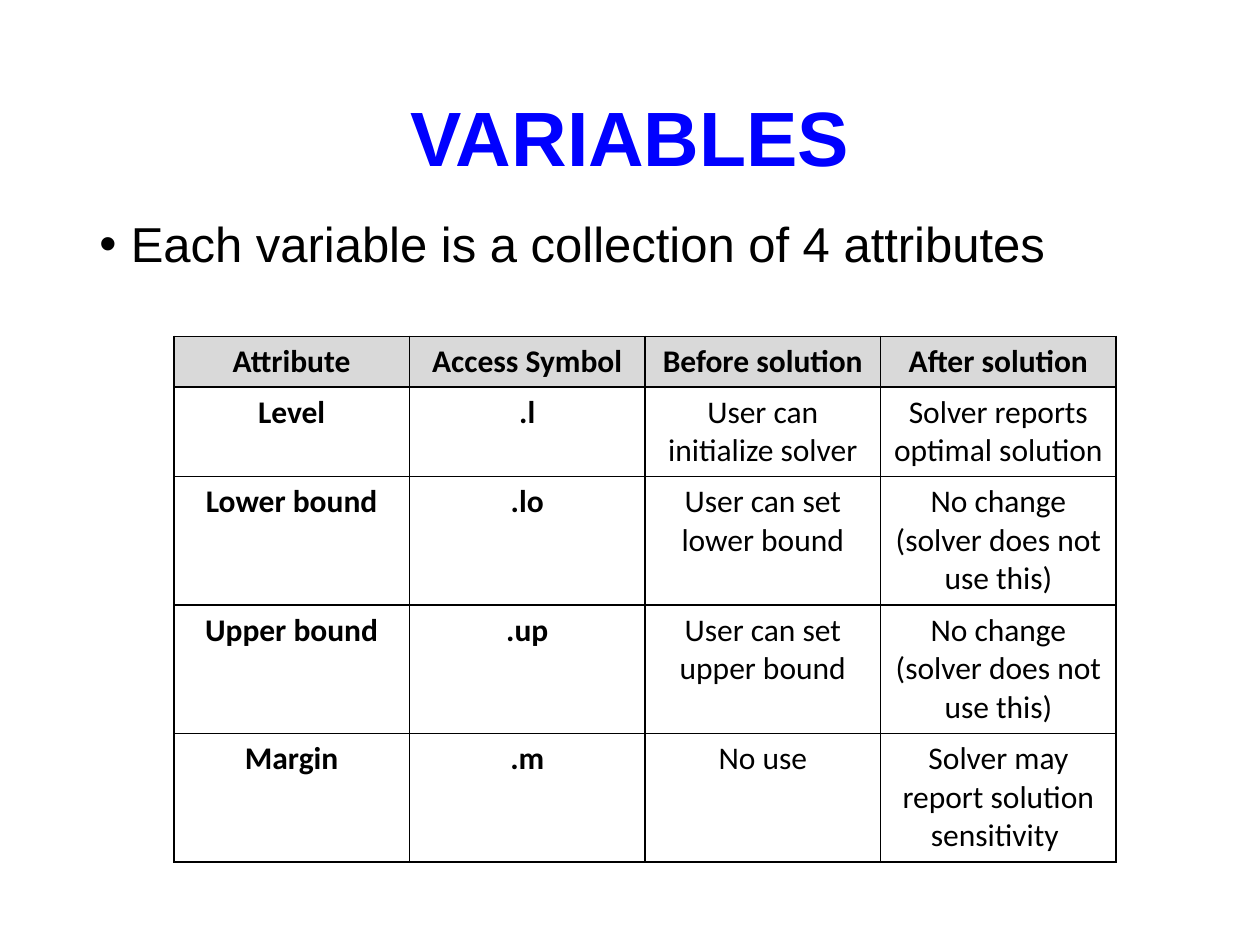
from pptx import Presentation
from pptx.dml.color import RGBColor
from pptx.enum.text import MSO_ANCHOR, PP_ALIGN
from pptx.oxml import parse_xml
from pptx.oxml.ns import nsdecls
from pptx.util import Inches, Pt

COLORS = {"title": "0000FF", "text": "000000", "border": "000000", "header": "D9D9D9"}

TITLE = "VARIABLES"
BULLET = "Each variable is a collection of 4 attributes"
ATTRIBUTES = [
    ("Attribute", "Access Symbol", "Before solution", "After solution"),
    ("Level", ".l", "User can initialize solver", "Solver reports optimal solution"),
    ("Lower bound", ".lo", "User can set lower bound", "No change (solver does not use this)"),
    ("Upper bound", ".up", "User can set upper bound", "No change (solver does not use this)"),
    ("Margin", ".m", "No use", "Solver may report solution sensitivity "),
]
ROW_HEIGHTS = [0.4, 0.71, 1.02, 1.02, 1.02]
COLUMN_WIDTH = 1.87
BOLD_COLUMNS = 2


def add_run(paragraph, text, size, font_name, color, bold=False):
    run = paragraph.add_run()
    run.text = text
    run.font.size = Pt(size)
    run.font.name = font_name
    run.font.bold = bold
    run.font.color.rgb = RGBColor.from_string(COLORS[color])


def add_title(slide):
    title = slide.shapes.title
    title.left, title.top = Inches(0.69), Inches(0.4)
    title.width, title.height = Inches(8.62), Inches(1.45)
    title.text_frame.vertical_anchor = MSO_ANCHOR.MIDDLE
    paragraph = title.text_frame.paragraphs[0]
    paragraph.alignment = PP_ALIGN.CENTER
    paragraph.line_spacing = 0.9
    add_run(paragraph, TITLE, 44, "Arial", "title", bold=True)


def add_bullet(slide):
    box = slide.shapes.add_textbox(Inches(0.69), Inches(1.7), Inches(9.13), Inches(5.39))
    box.text_frame.word_wrap = True
    paragraph = box.text_frame.paragraphs[0]
    properties = paragraph._p.get_or_add_pPr()
    properties.set("marL", str(Inches(0.25)))
    properties.set("indent", str(Inches(-0.25)))
    properties.append(parse_xml(f'<a:buFont {nsdecls("a")} typeface="Arial"/>'))
    properties.append(parse_xml(f'<a:buChar {nsdecls("a")} char="•"/>'))
    paragraph.line_spacing = 0.9
    add_run(paragraph, BULLET, 28, "Arial", "text")


def add_borders(cell):
    properties = cell._tc.get_or_add_tcPr()
    for side in ("lnL", "lnR", "lnT", "lnB"):
        properties.append(parse_xml(
            f'<a:{side} {nsdecls("a")} w="{Pt(1)}"><a:solidFill>'
            f'<a:srgbClr val="{COLORS["border"]}"/></a:solidFill></a:{side}>'))


def add_attribute_table(slide):
    column_count = len(ATTRIBUTES[0])
    table = slide.shapes.add_table(
        len(ATTRIBUTES), column_count, Inches(1.38), Inches(2.67),
        Inches(COLUMN_WIDTH * column_count), Inches(sum(ROW_HEIGHTS))).table
    for column in table.columns:
        column.width = Inches(COLUMN_WIDTH)
    for row_index, (texts, height) in enumerate(zip(ATTRIBUTES, ROW_HEIGHTS)):
        table.rows[row_index].height = Inches(height)
        is_header = row_index == 0
        for column_index, text in enumerate(texts):
            cell = table.cell(row_index, column_index)
            add_borders(cell)
            if is_header:
                cell.fill.solid()
                cell.fill.fore_color.rgb = RGBColor.from_string(COLORS["header"])
            else:
                cell.fill.background()
            paragraph = cell.text_frame.paragraphs[0]
            paragraph.alignment = PP_ALIGN.CENTER
            bold = is_header or column_index < BOLD_COLUMNS
            add_run(paragraph, text, 18, "Calibri", "text", bold)


def main():
    presentation = Presentation()
    presentation.slide_width, presentation.slide_height = Inches(10), Inches(7.5)
    slide = presentation.slides.add_slide(presentation.slide_layouts[5])
    add_title(slide)
    add_bullet(slide)
    add_attribute_table(slide)
    presentation.save("out.pptx")


if __name__ == "__main__":
    main()
